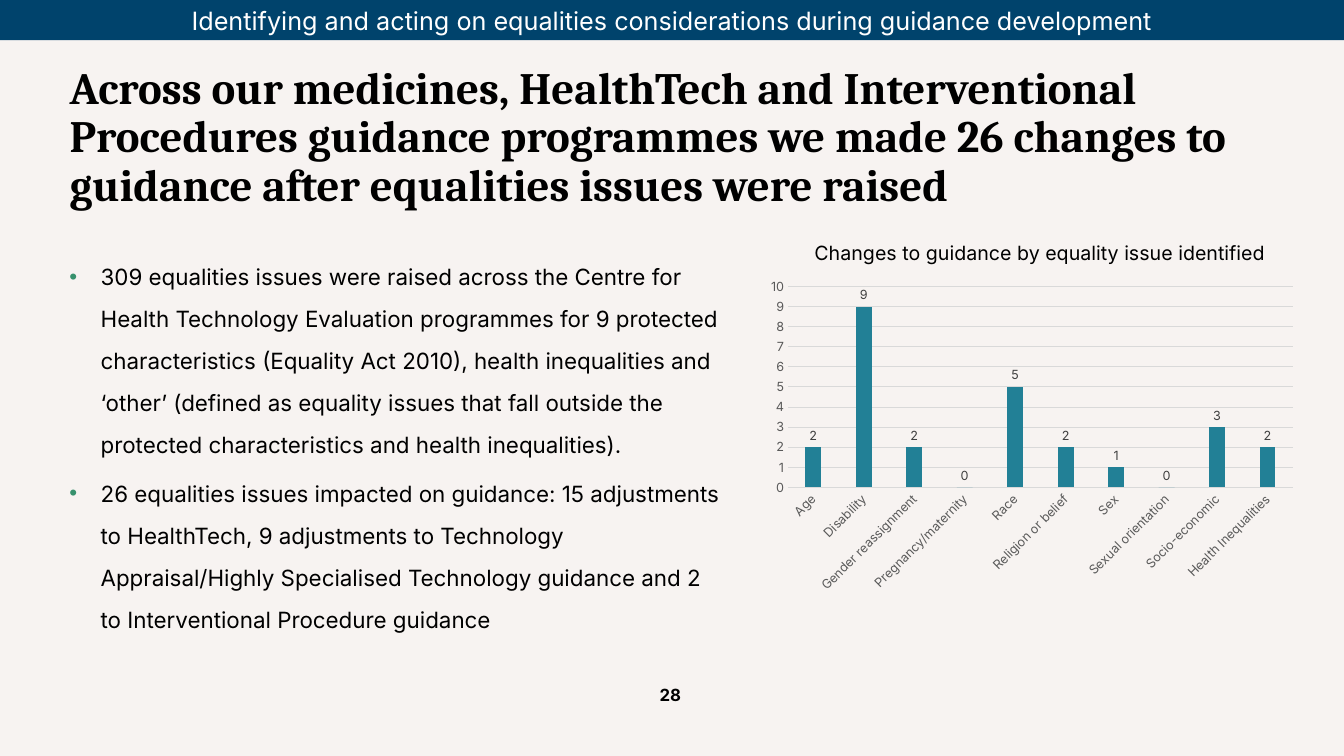
import pptx
import pptx.chart.data
import pptx.dml.color
import pptx.enum.chart
import pptx.enum.shapes
import pptx.enum.text
import pptx.oxml
import pptx.oxml.ns
import pptx.util


class Theme:
    paper = pptx.dml.color.RGBColor.from_string("F7F3F1")
    navy = pptx.dml.color.RGBColor.from_string("00436C")
    teal = pptx.dml.color.RGBColor.from_string("228096")
    black = pptx.dml.color.RGBColor.from_string("000000")
    white = pptx.dml.color.RGBColor.from_string("FFFFFF")
    axis_grey = pptx.dml.color.RGBColor.from_string("595959")
    label_grey = pptx.dml.color.RGBColor.from_string("404040")
    rule_grey = pptx.dml.color.RGBColor.from_string("D9D9D9")
    bullet = "37916D"
    heading_font = "Cambria"
    body_font = "Inter"
    title, band, body, caption, number, chart, axis = 32, 18, 16, 14, 12, 10, 9


deck = pptx.Presentation()
deck.slide_width = pptx.util.Inches(13.33)
deck.slide_height = pptx.util.Inches(7.5)
page = deck.slides.add_slide(deck.slide_layouts[5])
page.background.fill.solid()
page.background.fill.fore_color.rgb = Theme.paper


def area(left, top, width, height):
    """Turn percentages of the slide into left, top, width and height."""
    column, row = deck.slide_width / 100, deck.slide_height / 100
    return [round(length) for length in (left * column, top * row, width * column, height * row)]


def set_font(font, size, color=Theme.black, name=Theme.body_font, bold=False):
    font.size = pptx.util.Pt(size)
    font.color.rgb = color
    font.name = name
    font.bold = bold


# Title
title = page.shapes.title
title.left, title.top, title.width, title.height = area(4.43, 8, 90.85, 16.93)
title.text_frame.text = (
    "Across our medicines, HealthTech and Interventional Procedures guidance "
    "programmes we made 26 changes to guidance after equalities issues were raised"
)
title.text_frame.word_wrap = True
title.text_frame.auto_size = pptx.enum.text.MSO_AUTO_SIZE.NONE
title.text_frame.vertical_anchor = pptx.enum.text.MSO_ANCHOR.TOP
para = title.text_frame.paragraphs[0]
para.alignment = pptx.enum.text.PP_ALIGN.LEFT
para.line_spacing = 0.9
set_font(para.font, Theme.title, name=Theme.heading_font, bold=True)

# Section band
band = page.shapes.add_shape(pptx.enum.shapes.MSO_SHAPE.RECTANGLE, *area(0, 0, 100, 5.33))
band.shadow.inherit = False
band.fill.solid()
band.fill.fore_color.rgb = Theme.navy
band.line.fill.background()
band.text_frame.text = "Identifying and acting on equalities considerations during guidance development"
band.text_frame.vertical_anchor = pptx.enum.text.MSO_ANCHOR.MIDDLE
para = band.text_frame.paragraphs[0]
para.alignment = pptx.enum.text.PP_ALIGN.CENTER
set_font(para.font, Theme.band, Theme.white)

# Findings
findings = [
    "309 equalities issues were raised across the Centre for Health Technology Evaluation "
    "programmes for 9 protected characteristics (Equality Act 2010), health inequalities and "
    "‘other’ (defined as equality issues that fall outside the protected characteristics and "
    "health inequalities).",
    "26 equalities issues impacted on guidance: 15 adjustments to HealthTech, 9 adjustments to "
    "Technology Appraisal/Highly Specialised Technology guidance and 2 to Interventional "
    "Procedure guidance",
]
box = page.shapes.add_textbox(*area(4.43, 32.13, 50.41, 54.13))
box.text_frame.word_wrap = True
box.text_frame.text = "\n".join(findings)
indent = pptx.util.Inches(0.31)
for index, para in enumerate(box.text_frame.paragraphs):
    para.line_spacing = pptx.util.Pt(30)
    para.space_before = pptx.util.Pt(5 if index else 0)
    properties = para._p.get_or_add_pPr()
    properties.set("marL", str(indent))
    properties.set("indent", str(-indent))
    namespace = pptx.oxml.ns.nsdecls("a")
    for bullet_xml in (
        f'<a:buClr {namespace}><a:srgbClr val="{Theme.bullet}"/></a:buClr>',
        f'<a:buFont {namespace} typeface="Arial"/>',
        f'<a:buChar {namespace} char="•"/>',
    ):
        properties.append(pptx.oxml.parse_xml(bullet_xml))
    set_font(para.font, Theme.body)

# Chart caption and page number
left = pptx.enum.text.PP_ALIGN.LEFT
center = pptx.enum.text.PP_ALIGN.CENTER
for text, place, size, alignment, bold in (
    ("Changes to guidance by equality issue identified", (59.86, 31.2, 35.56, 4.53), Theme.caption, left, False),
    ("28", (38.63, 89.87, 22.51, 5.33), Theme.number, center, True),
):
    box = page.shapes.add_textbox(*area(*place))
    box.text_frame.word_wrap = True
    box.text_frame.text = text
    para = box.text_frame.paragraphs[0]
    para.alignment = alignment
    set_font(para.font, size, bold=bold)

# Chart of changes
changes = {
    "Age": 2,
    "Disability": 9,
    "Gender reassignment": 2,
    "Pregnancy/maternity": 0,
    "Race": 5,
    "Religion or belief": 2,
    "Sex": 1,
    "Sexual orientation": 0,
    "Socio-economic": 3,
    "Health Inequalities": 2,
}
data = pptx.chart.data.CategoryChartData()
data.categories = list(changes)
data.add_series("Series 1", list(changes.values()))
chart = page.shapes.add_chart(
    pptx.enum.chart.XL_CHART_TYPE.COLUMN_CLUSTERED, *area(56.56, 36, 40.44, 43.33), data
).chart
chart.has_title = False
chart.has_legend = False
set_font(chart.font, Theme.chart)

plot = chart.plots[0]
plot.vary_by_categories = False
plot.gap_width = 219
plot.overlap = -27
series = plot.series[0]
series.format.fill.solid()
series.format.fill.fore_color.rgb = Theme.teal
labels = series.data_labels
labels.show_value = True
labels.position = pptx.enum.chart.XL_LABEL_POSITION.OUTSIDE_END
set_font(labels.font, Theme.axis, Theme.label_grey)

# Chart axes
for axis in (chart.category_axis, chart.value_axis):
    axis.major_tick_mark = pptx.enum.chart.XL_TICK_MARK.NONE
    axis.minor_tick_mark = pptx.enum.chart.XL_TICK_MARK.NONE
    set_font(axis.tick_labels.font, Theme.axis, Theme.axis_grey)
category_text = chart.category_axis._element.find(pptx.oxml.ns.qn("c:txPr"))
category_text.find(pptx.oxml.ns.qn("a:bodyPr")).set("rot", str(-45 * 60000))
chart.value_axis.minimum_scale = 0
chart.value_axis.maximum_scale = 10
chart.value_axis.major_unit = 1
chart.value_axis.format.line.fill.background()
chart.value_axis.has_major_gridlines = True
for line in (chart.category_axis.format.line, chart.value_axis.major_gridlines.format.line):
    line.color.rgb = Theme.rule_grey
    line.width = pptx.util.Pt(0.75)

deck.save("out.pptx")
